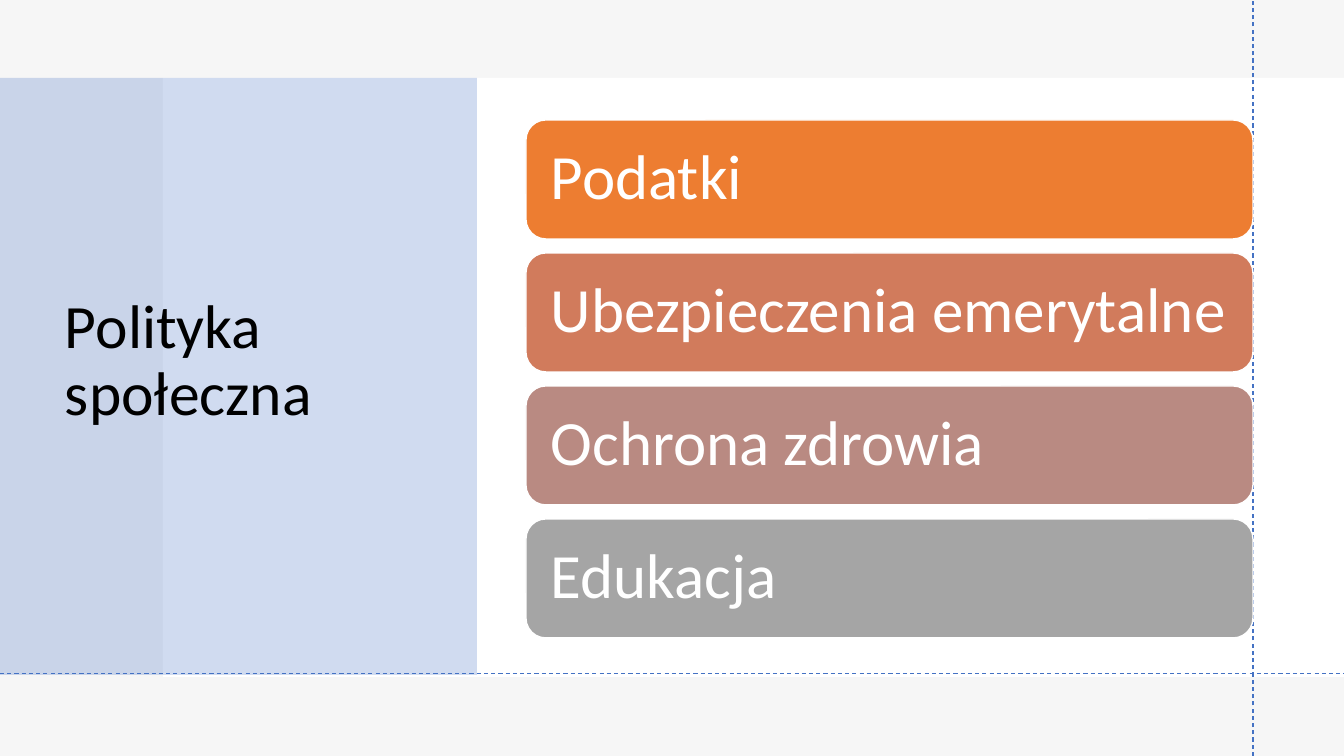
from dataclasses import dataclass

from lxml import etree
from pptx import Presentation
from pptx.dml.color import RGBColor
from pptx.enum.dml import MSO_LINE
from pptx.enum.shapes import MSO_CONNECTOR, MSO_SHAPE
from pptx.enum.text import MSO_ANCHOR, PP_ALIGN
from pptx.oxml.ns import qn
from pptx.util import Pt

PX = 9071  # EMU per px, at 100.8 px to the inch
WIDTH, HEIGHT = 1344, 756


@dataclass(frozen=True)
class Theme:
    font: str = "Calibri"
    white: str = "FFFFFF"
    black: str = "000000"
    grey: str = "E7E6E6"
    blue: str = "4472C4"
    bars: tuple = ("ED7D31", "D17B5C", "B98A82", "A5A5A5")
    title_size: int = 44
    bar_size: int = 45


theme = Theme()


def add_block(kind, box, color, alpha=100):
    """Add a filled shape without outline; alpha is opacity in percent."""
    block = slide.shapes.add_shape(kind, *(v * PX for v in box))
    block.shadow.inherit = False
    block.line.fill.background()
    block.fill.solid()
    block.fill.fore_color.rgb = RGBColor.from_string(color)
    if alpha < 100:
        tint = block.fill._xPr.find(".//" + qn("a:srgbClr"))
        etree.SubElement(tint, qn("a:alpha"), val=str(alpha * 1000))
    return block


def write_text(shape, text, *, size, color, inset_x, inset_y):
    frame = shape.text_frame
    frame.word_wrap = True
    frame.vertical_anchor = MSO_ANCHOR.MIDDLE
    frame.margin_left = frame.margin_right = inset_x * PX
    frame.margin_top = frame.margin_bottom = inset_y * PX
    paragraph = frame.paragraphs[0]
    paragraph.alignment = PP_ALIGN.LEFT
    paragraph.line_spacing = 0.9
    run = paragraph.add_run()
    run.text = text
    run.font.name = theme.font
    run.font.size = Pt(size)
    run.font.color.rgb = RGBColor.from_string(color)


deck = Presentation()
deck.slide_width, deck.slide_height = WIDTH * PX, HEIGHT * PX
slide = deck.slides.add_slide(deck.slide_layouts[6])

# Backdrop: tinted sheet, white content panel, blue title panel
for box, color, alpha in (
    ((0, 0, WIDTH, HEIGHT), theme.white, 100),
    ((0, 0, WIDTH, HEIGHT), theme.grey, 35),
    ((163, 78, WIDTH - 163, 599), theme.white, 100),
    ((0, 78, 477, 597), theme.blue, 25),
):
    add_block(MSO_SHAPE.RECTANGLE, box, color, alpha)

title = slide.shapes.add_textbox(*(v * PX for v in (55, 75, 398, 574)))
write_text(title, "Polityka społeczna", size=theme.title_size,
           color=theme.black, inset_x=10, inset_y=5)

# Dashed guide lines
for ends in ((1253, HEIGHT, 1253, 0), (0, 674, WIDTH, 674)):
    guide = slide.shapes.add_connector(MSO_CONNECTOR.STRAIGHT, *(v * PX for v in ends))
    guide.line.color.rgb = RGBColor.from_string(theme.blue)
    guide.line.width = Pt(0.75)
    guide.line.dash_style = MSO_LINE.DASH
    etree.SubElement(guide._element.spPr, qn("a:effectLst"))

# Policy areas
areas = ("Podatki", "Ubezpieczenia emerytalne", "Ochrona zdrowia", "Edukacja")
bar_top, bar_pitch = 120, 133
for row, (area, color) in enumerate(zip(areas, theme.bars)):
    bar = add_block(MSO_SHAPE.ROUNDED_RECTANGLE,
                    (526, bar_top + row * bar_pitch, 727, 119), color)
    bar.line.color.rgb = RGBColor.from_string(theme.white)
    bar.line.width = Pt(1)
    write_text(bar, area, size=theme.bar_size, color=theme.white,
               inset_x=19, inset_y=19)

deck.save("out.pptx")
